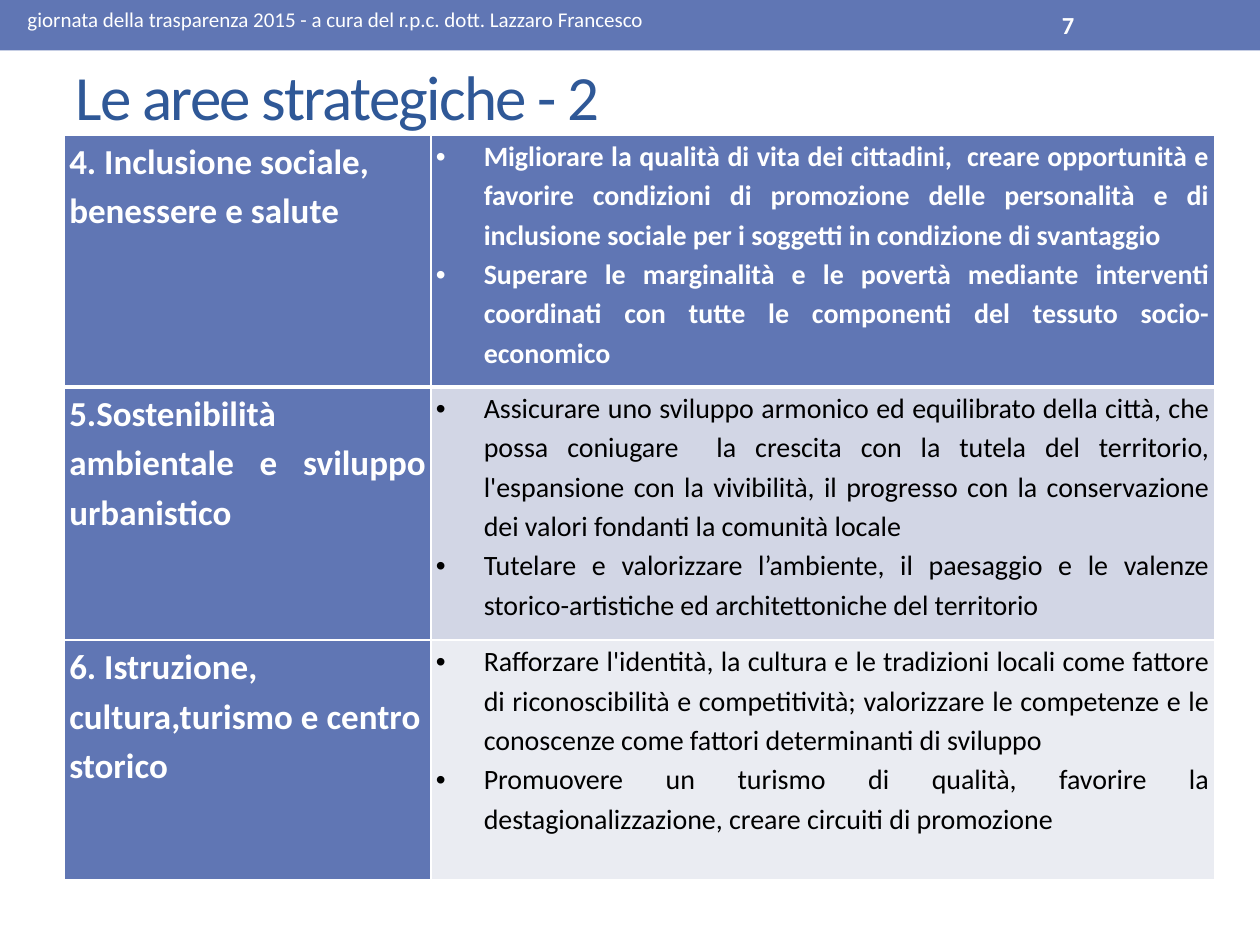
from lxml import etree
from pptx import Presentation
from pptx.dml.color import RGBColor
from pptx.enum.shapes import MSO_SHAPE
from pptx.enum.text import MSO_ANCHOR, MSO_AUTO_SIZE, PP_ALIGN
from pptx.oxml.ns import qn
from pptx.util import Inches, Pt

RECT = MSO_SHAPE.RECTANGLE
MIDDLE = MSO_ANCHOR.MIDDLE
NO_FIT = MSO_AUTO_SIZE.NONE
LEFT, JUSTIFY = PP_ALIGN.LEFT, PP_ALIGN.JUSTIFY

FONT = "Calibri"
COLORS = {"accent": "6076B4", "title": "2F5897", "white": "FFFFFF",
          "black": "000000", "band1": "D2D6E5", "band2": "EAECF2"}

# Table grid in inches
TABLE_LEFT, TABLE_TOP = 0.51, 1.07
COLS = [2.91, 6.22]
ROWS = [2, 2.01, 1.9]
INDENT = 0.38

# Area name, its alignment, goals, fill and text colour of the goals
AREAS = [
    ("4. Inclusione sociale, benessere e salute", LEFT,
     ["Migliorare la qualità di vita dei cittadini,  creare opportunità e "
      "favorire condizioni di promozione delle personalità e di inclusione "
      "sociale per i soggetti in condizione di svantaggio",
      "Superare le marginalità e le povertà mediante interventi coordinati "
      "con tutte le componenti del tessuto socio-economico"],
     "accent", "white"),
    ("5.Sostenibilità ambientale e sviluppo urbanistico", JUSTIFY,
     ["Assicurare uno sviluppo armonico ed equilibrato della città, che possa "
      "coniugare  la crescita con la tutela del territorio, l'espansione con "
      "la vivibilità, il progresso con la conservazione dei valori fondanti "
      "la comunità locale",
      "Tutelare e valorizzare l’ambiente, il paesaggio e le valenze "
      "storico-artistiche ed architettoniche del territorio"],
     "band1", "black"),
    ("6. Istruzione, cultura,turismo e centro storico", LEFT,
     ["Rafforzare l'identità, la cultura e le tradizioni locali come fattore "
      "di riconoscibilità e competitività; valorizzare le competenze e le "
      "conoscenze come fattori determinanti di sviluppo",
      "Promuovere un turismo di qualità, favorire la destagionalizzazione, "
      "creare circuiti di promozione"],
     "band2", "black"),
]


def rgb(name):
    return RGBColor.from_string(COLORS[name])


def add_run(p, text, size, color, bold=False):
    r = p.add_run()
    r.text = text
    for key, value in {"name": FONT, "size": Pt(size), "bold": bold}.items():
        setattr(r.font, key, value)
    r.font.color.rgb = rgb(color)
    return r


def add_band(s, width, height):
    sp = s.shapes.add_shape(RECT, 0, 0, width, height)
    sp.shadow.inherit = False
    sp.fill.solid()
    sp.fill.fore_color.rgb = rgb("accent")
    sp.line.fill.background()


def add_label(s, box, text, size, bold=False):
    tf = s.shapes.add_textbox(*map(Inches, box)).text_frame
    tf.word_wrap = True
    tf.vertical_anchor = MIDDLE
    add_run(tf.paragraphs[0], text, size, "white", bold)


def set_title(s, text):
    sp = s.shapes.title
    box = {"left": 0.5, "top": 0.44, "width": 9, "height": 0.63}
    for key, value in box.items():
        setattr(sp, key, Inches(value))
    tf = sp.text_frame
    tf.auto_size = NO_FIT
    tf.vertical_anchor = MIDDLE
    p = tf.paragraphs[0]
    p.alignment = LEFT
    r = add_run(p, text, 36, "title")
    r.font._element.set("spc", "-100")


def set_borders(cell, bottom, top):
    tc_pr = cell._tc.get_or_add_tcPr()
    widths = {"lnL": 1, "lnR": 1, "lnT": top, "lnB": bottom}
    for i, (tag, width) in enumerate(widths.items()):
        ln = etree.Element(qn(f"a:{tag}"), w=str(Pt(width)))
        fill = etree.SubElement(ln, qn("a:solidFill"))
        etree.SubElement(fill, qn("a:srgbClr"), val=COLORS["white"])
        tc_pr.insert(i, ln)


def set_bullet(p):
    p_pr = p._p.get_or_add_pPr()
    p_pr.set("marL", str(Inches(INDENT)))
    p_pr.set("indent", str(-Inches(INDENT)))
    etree.SubElement(p_pr, qn("a:buFont"), typeface="Arial")
    etree.SubElement(p_pr, qn("a:buChar"), char="•")


def fill_cell(cell, texts, fill, size, color, bold, align, bullets=False):
    margins = {"left": 0.04, "right": 0.04, "top": 0, "bottom": 0}
    for side, value in margins.items():
        setattr(cell, f"margin_{side}", Inches(value))
    cell.fill.solid()
    cell.fill.fore_color.rgb = rgb(fill)
    tf = cell.text_frame
    for i, text in enumerate(texts):
        p = tf.add_paragraph() if i else tf.paragraphs[0]
        p.alignment = align
        p.line_spacing = 1.15
        if bullets:
            set_bullet(p)
        add_run(p, text, size, color, bold)


def add_areas_table(s):
    box = (TABLE_LEFT, TABLE_TOP, sum(COLS), sum(ROWS))
    table = s.shapes.add_table(len(ROWS), len(COLS),
                               *map(Inches, box)).table
    table.first_row = table.horz_banding = False
    for col, width in zip(table.columns, COLS):
        col.width = Inches(width)
    for i, (name, align, goals, fill, color) in enumerate(AREAS):
        row = table.rows[i]
        row.height = Inches(ROWS[i])
        head, body = row.cells
        fill_cell(head, [name], "accent", 20, "white", True, align)
        fill_cell(body, goals, fill, 16, color, i == 0, JUSTIFY, bullets=True)
        for cell in (head, body):
            # Thicker rule under the first row
            set_borders(cell, bottom=3 if i == 0 else 1, top=3 if i == 1 else 1)


def main():
    prs = Presentation()
    prs.slide_width, prs.slide_height = Inches(10), Inches(7.5)
    s = prs.slides.add_slide(prs.slide_layouts[5])

    # Header band, title and table
    add_band(s, prs.slide_width, Inches(0.4))
    set_title(s, "Le aree strategiche - 2")
    add_areas_table(s)

    # Header text and page number
    add_label(s, (0.12, 0.02, 8.13, 0.27),
              "giornata della trasparenza 2015 - a cura del r.p.c. "
              "dott. Lazzaro Francesco", 12)
    add_label(s, (8.33, 0.02, 1.17, 0.36), "7", 14, bold=True)

    prs.save("out.pptx")


if __name__ == "__main__":
    main()
